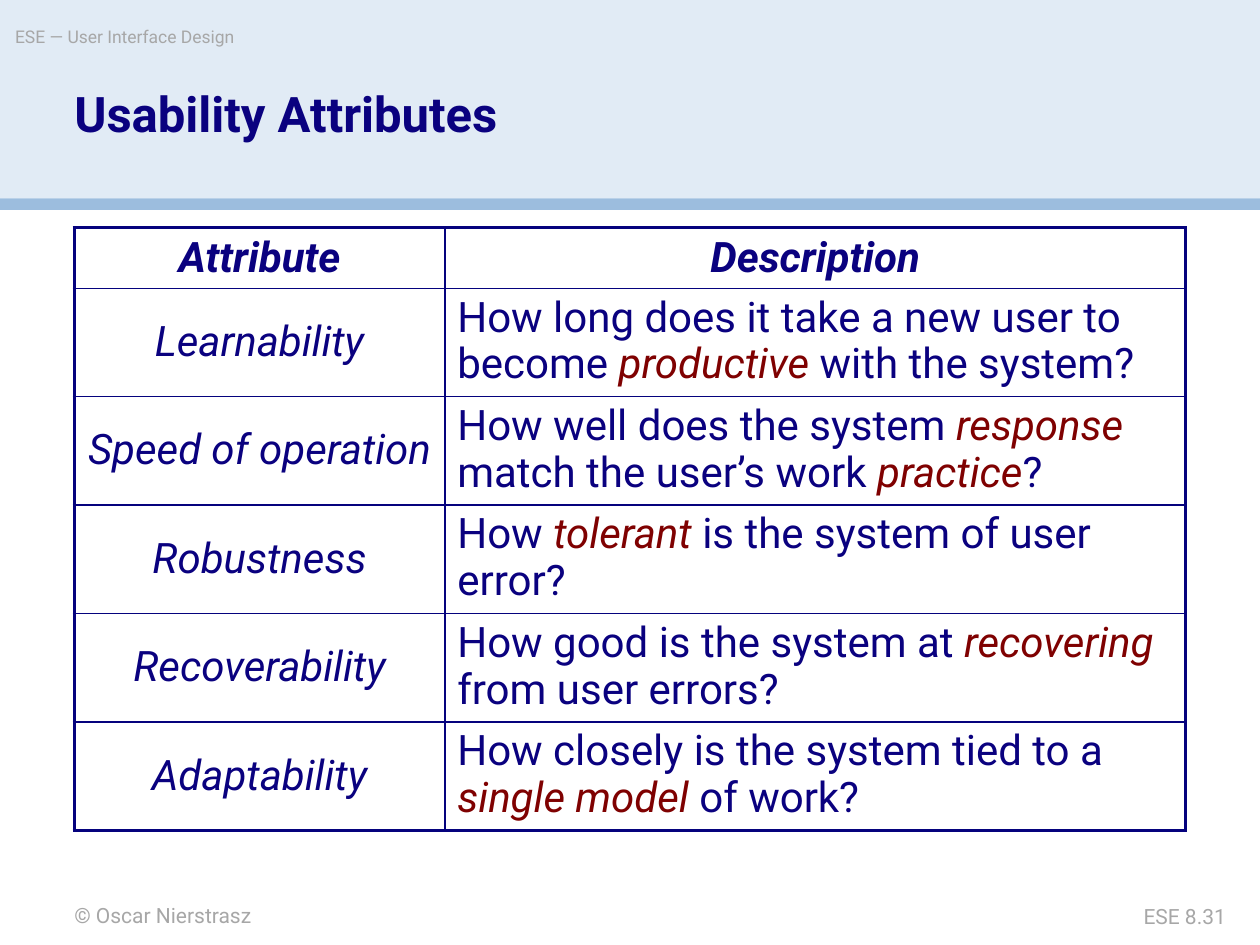
"""Build the Usability Attributes slide: header band, title, attribute table and footer."""
from dataclasses import dataclass

import lxml.etree
import pptx
import pptx.dml.color
import pptx.enum.shapes
import pptx.enum.text
import pptx.oxml.ns
import pptx.util

RGBColor = pptx.dml.color.RGBColor
Align = pptx.enum.text.PP_ALIGN

NAVY = RGBColor(0x0A, 0x01, 0x7F)
BORDER = RGBColor(0x05, 0x02, 0x7D)
MAROON = RGBColor(0x7F, 0x01, 0x01)
GREY = RGBColor(0xA7, 0xA7, 0xA7)
PALE_BLUE = RGBColor(0xE1, 0xEB, 0xF5)
MID_BLUE = RGBColor(0x9C, 0xBD, 0xDE)

FONT = "Roboto"
WIDTH = pptx.util.Inches(10)
HEIGHT = pptx.util.Inches(7.5)
MARGIN = 0.059
THIN, THICK = 1, 2.25
COLUMN_UNIT = 2.94
HEADER_ROW, BODY_ROW = 0.47, 0.84


@dataclass(frozen=True)
class Box:
    """A rectangle in shares of the slide's width and height."""
    left: float
    top: float
    width: float
    height: float

    def lengths(self) -> tuple[int, int, int, int]:
        """Return left, top, width and height in EMU."""
        return (int(self.left * WIDTH), int(self.top * HEIGHT),
                int(self.width * WIDTH), int(self.height * HEIGHT))


@dataclass(frozen=True)
class Band:
    """A filled strip across the slide."""
    box: Box
    color: RGBColor


@dataclass(frozen=True)
class Label:
    """A line of text with its place and format."""
    box: Box
    text: str
    size: float
    color: RGBColor = GREY
    bold: bool = False
    align: Align = Align.LEFT
    line_spacing: float = 1.0
    wrap: bool = True


@dataclass(frozen=True)
class Attribute:
    """A table row; asterisks in the description enclose emphasised words."""
    name: str
    description: str


BANDS = (
    Band(Box(0, 0, 1, 0.21), PALE_BLUE),
    Band(Box(0, 0.21, 1, 0.012), MID_BLUE),
)
LABELS = (
    Label(Box(MARGIN, 0.955, 0.417, 0.027), "© Oscar Nierstrasz", 12),
    Label(Box(0.012, 0.027, 0.59, 0.037), "ESE — User Interface Design", 10, wrap=False),
    Label(Box(0.825, 0.956, 0.148, 0.027), "ESE 8.31", 12, align=Align.RIGHT),
    Label(Box(MARGIN, 0.095, 0.724, 0.119), "Usability Attributes", 28, NAVY,
          bold=True, line_spacing=0.9),
)
ATTRIBUTES = (
    Attribute("Learnability",
              "How long does it take a new user to become *productive* with the system?"),
    Attribute("Speed of operation",
              "How well does the system *response* match the user’s work *practice*?"),
    Attribute("Robustness", "How *tolerant* is the system of user error?"),
    Attribute("Recoverability",
              "How good is the system at *recovering* from user errors?"),
    Attribute("Adaptability",
              "How closely is the system tied to a *single model* of work?"),
)


def write_text(text_frame, text: str, *, size: float, color: RGBColor, bold: bool = False,
               italic: bool = False, align: Align = Align.LEFT,
               line_spacing: float = 1.0) -> None:
    """Write one paragraph, with words between asterisks emphasised."""
    paragraph = text_frame.paragraphs[0]
    paragraph.alignment = align
    paragraph.line_spacing = line_spacing
    for index, part in enumerate(text.split("*")):
        emphasised = index % 2 == 1
        run = paragraph.add_run()
        run.text = part
        run.font.name = FONT
        run.font.size = pptx.util.Pt(size)
        run.font.bold = bold
        run.font.italic = italic or emphasised
        run.font.color.rgb = MAROON if emphasised else color


def draw_band(slide, band: Band) -> None:
    """Draw a filled strip without an outline."""
    shape = slide.shapes.add_shape(pptx.enum.shapes.MSO_SHAPE.RECTANGLE, *band.box.lengths())
    shape.shadow.inherit = False
    shape.fill.solid()
    shape.fill.fore_color.rgb = band.color
    shape.line.fill.background()


def draw_label(slide, label: Label) -> None:
    """Draw a text box without insets."""
    text_frame = slide.shapes.add_textbox(*label.box.lengths()).text_frame
    text_frame.word_wrap = label.wrap
    text_frame.margin_left = text_frame.margin_right = 0
    text_frame.margin_top = text_frame.margin_bottom = 0
    write_text(text_frame, label.text, size=label.size, color=label.color, bold=label.bold,
               align=label.align, line_spacing=label.line_spacing)


def set_borders(cell, widths: dict[str, float]) -> None:
    """Give a cell its border lines, keyed by side letter."""
    qn = pptx.oxml.ns.qn
    properties = cell._tc.get_or_add_tcPr()
    for side, width in widths.items():
        line = lxml.etree.SubElement(properties, qn(f"a:ln{side}"), w=str(pptx.util.Pt(width)))
        fill = lxml.etree.SubElement(line, qn("a:solidFill"))
        lxml.etree.SubElement(fill, qn("a:srgbClr"), val=str(BORDER))


def draw_table(slide, attributes: tuple[Attribute, ...]) -> None:
    """Draw the attribute table with a thick outer frame."""
    rows = (Attribute("Attribute", "Description"), *attributes)
    last = len(rows) - 1
    total_height = HEADER_ROW + BODY_ROW * last
    box = Box(MARGIN, 0.241, 0.882, total_height / 7.5)
    table = slide.shapes.add_table(len(rows), 2, *box.lengths()).table
    table.first_row = table.horz_banding = False
    for index, column in enumerate(table.columns):
        column.width = pptx.util.Inches(COLUMN_UNIT * (index + 1))
    for row_index, attribute in enumerate(rows):
        header = row_index == 0
        table.rows[row_index].height = pptx.util.Inches(HEADER_ROW if header else BODY_ROW)
        for column_index, text in enumerate((attribute.name, attribute.description)):
            name = column_index == 0
            centred = header or name
            cell = table.cell(row_index, column_index)
            set_borders(cell, {
                "L": THICK if name else THIN,
                "R": THIN if name else THICK,
                "T": THICK if header else THIN,
                "B": THICK if row_index == last else THIN,
            })
            cell.fill.background()
            if centred:
                cell.vertical_anchor = pptx.enum.text.MSO_ANCHOR.MIDDLE
            write_text(cell.text_frame, text, size=24, color=NAVY, bold=header,
                       italic=centred, align=Align.CENTER if centred else Align.LEFT,
                       line_spacing=0.95)


def main() -> None:
    """Build and save the presentation."""
    presentation = pptx.Presentation()
    presentation.slide_width = WIDTH
    presentation.slide_height = HEIGHT
    slide = presentation.slides.add_slide(presentation.slide_layouts[6])
    for band in BANDS:
        draw_band(slide, band)
    for label in LABELS:
        draw_label(slide, label)
    draw_table(slide, ATTRIBUTES)
    presentation.save("out.pptx")


if __name__ == "__main__":
    main()
